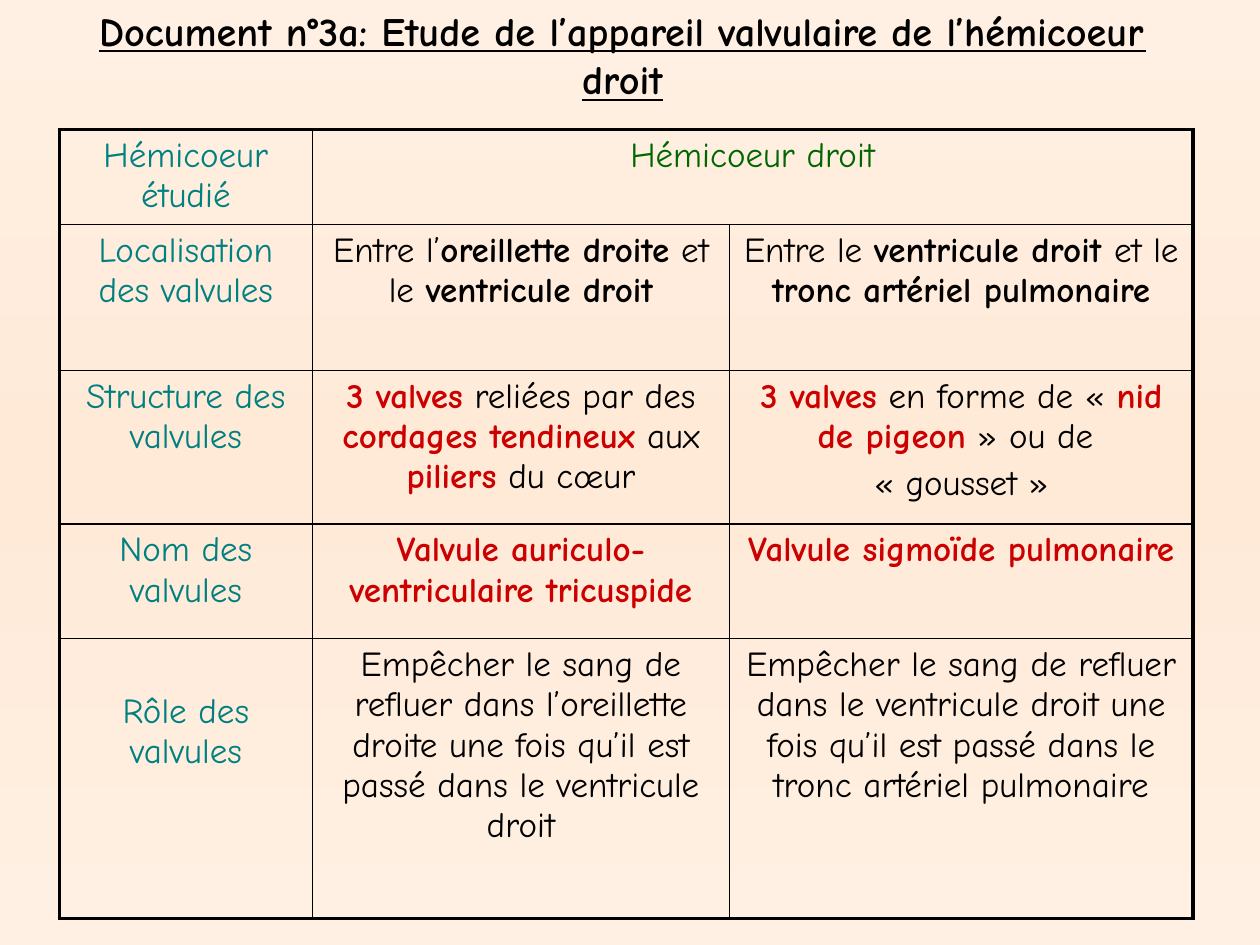
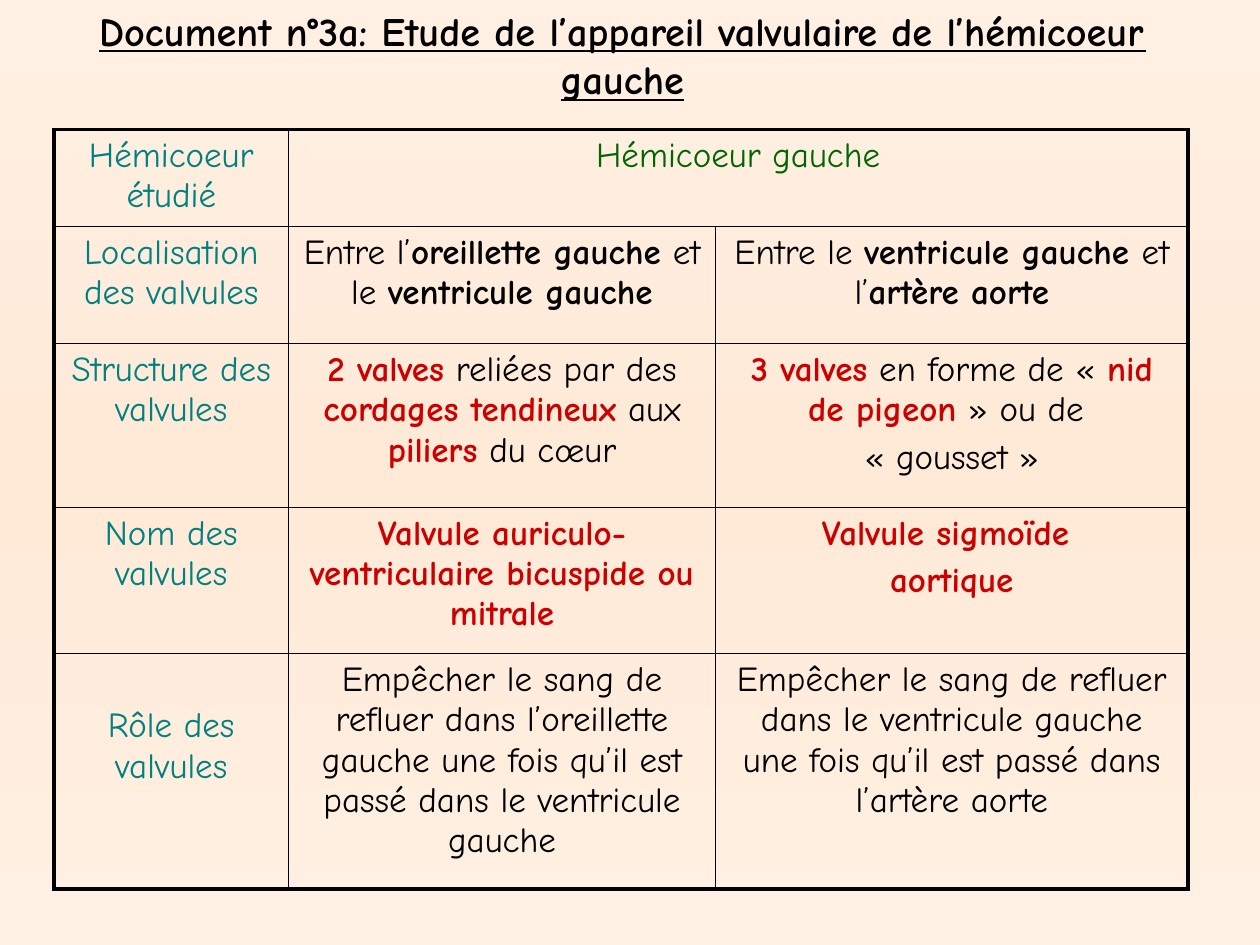
import copy

import pptx
import pptx.dml.color
import pptx.enum.text
import pptx.oxml
import pptx.oxml.ns
import pptx.util
from pptx.util import Inches

FONT = "Comic Neue"
BLACK, TEAL, GREEN, RED = "000000", "008080", "006600", "CC0000"
BACKGROUND = ("FFF0E3", "FFEAD7", "FFF0E3")
THIN, THICK = 1, 2.25
TITLE = "Document n°3a: Etude de l’appareil valvulaire de l’hémicoeur "
LABELS = (
    "Hémicoeur étudié",
    "Localisation des valvules",
    "Structure des valvules",
    "Nom des valvules",
    "Rôle des valvules",
)
NEST_SHAPE = "*3 valves* en forme de « *nid de pigeon* » ou de \n« gousset »"
CORDED_SHAPE = "*{} valves* reliées par des *cordages tendineux* aux *piliers* du cœur"
PREVENT = "Empêcher le sang de refluer dans {} une fois qu’il est passé dans {}"

# Text between asterisks is emphasised.
HEARTS = (
    {
        "side": "droit",
        "left": 0.47,
        "columns": (2.01, 3.31, 3.68),
        "rows": (0.75, 1.16, 1.22, 0.91, 2.22),
        "valves": (
            ("Entre l’*oreillette droite* et le *ventricule droit*",
             "Entre le *ventricule droit *et le* tronc artériel pulmonaire*"),
            (CORDED_SHAPE.format(3), NEST_SHAPE),
            ("*Valvule auriculo-ventriculaire tricuspide*",
             "*Valvule sigmoïde pulmonaire*"),
            (PREVENT.format("l’oreillette droite", "le ventricule droit"),
             PREVENT.format("le ventricule droit", "le tronc artériel pulmonaire")),
        ),
    },
    {
        "side": "gauche",
        "left": 0.43,
        "columns": (1.86, 3.39, 3.75),
        "rows": (0.75, 0.93, 1.3, 1.16, 1.87),
        "valves": (
            ("Entre l’*oreillette gauche* et le *ventricule gauche*",
             "Entre le *ventricule gauche *et l’*artère aorte*"),
            (CORDED_SHAPE.format(2), NEST_SHAPE),
            ("*Valvule auriculo-ventriculaire bicuspide ou mitrale*",
             "*Valvule sigmoïde *\n*aortique*"),
            (PREVENT.format("l’oreillette gauche", "le ventricule gauche"),
             PREVENT.format("le ventricule gauche", "l’artère aorte")),
        ),
    },
)


def rgb(value):
    return pptx.dml.color.RGBColor.from_string(value)


def paint_background(slide):
    fill = slide.background.fill
    fill.gradient()
    fill.gradient_angle = 90
    stop_list = slide._element.find(".//" + pptx.oxml.ns.qn("a:gsLst"))
    stop_list.insert(1, copy.deepcopy(stop_list[0]))
    for index, (stop, color) in enumerate(zip(fill.gradient_stops, BACKGROUND)):
        stop.position = index / 2
        stop.color.rgb = rgb(color)


def write(frame, text, size, color, emphasis=BLACK, underline=False):
    for index, line in enumerate(text.split("\n")):
        para = frame.add_paragraph() if index else frame.paragraphs[0]
        para.alignment = pptx.enum.text.PP_ALIGN.CENTER
        if index:
            para.space_before = pptx.util.Pt(4)
        for position, part in enumerate(line.split("*")):
            if not part:
                continue
            strong = position % 2 == 1
            span = para.add_run()
            span.text = part
            span.font.name = FONT
            span.font.size = pptx.util.Pt(size)
            span.font.bold = strong
            span.font.underline = underline
            span.font.color.rgb = rgb(emphasis if strong else color)


def draw_borders(cell, widths):
    properties = cell._tc.get_or_add_tcPr()
    for side, width in zip("LRTB", widths):
        properties.append(pptx.oxml.parse_xml(
            f'<a:ln{side} {pptx.oxml.ns.nsdecls("a")} w="{int(pptx.util.Pt(width))}">'
            f'<a:solidFill><a:srgbClr val="{BLACK}"/></a:solidFill></a:ln{side}>'))
    cell.fill.background()


def add_title(slide, side):
    box = slide.shapes.add_textbox(Inches(0.39), 0, Inches(9.1), Inches(0.87))
    box.text_frame.word_wrap = True
    write(box.text_frame, f"*{TITLE}{side}*", 23, BLACK, underline=True)


def add_valve_table(slide, heart):
    columns, rows = heart["columns"], heart["rows"]
    table = slide.shapes.add_table(
        len(rows), len(columns), Inches(heart["left"]), Inches(1.03),
        Inches(sum(columns)), Inches(sum(rows))).table
    table.first_row = table.horz_banding = False
    for column, width in zip(table.columns, columns):
        column.width = Inches(width)
    for row, height in zip(table.rows, rows):
        row.height = Inches(height)
    table.cell(0, 1).merge(table.cell(0, 2))

    last_row, last_column = len(rows) - 1, len(columns) - 1
    for r in range(len(rows)):
        for c in range(len(columns)):
            outer = (c == 0, c == last_column or (r == 0 and c == 1), r == 0, r == last_row)
            draw_borders(table.cell(r, c), [THICK if edge else THIN for edge in outer])

    for r, label in enumerate(LABELS):
        write(table.cell(r, 0).text_frame, label, 20, TEAL)
    table.cell(last_row, 0).margin_top = Inches(0.42)
    write(table.cell(0, 1).text_frame, f"Hémicoeur {heart['side']}", 20, GREEN)
    for r, texts in enumerate(heart["valves"], 1):
        for c, text in enumerate(texts, 1):
            write(table.cell(r, c).text_frame, text, 20, BLACK, BLACK if r == 1 else RED)


def main():
    deck = pptx.Presentation()
    deck.slide_width, deck.slide_height = Inches(10), Inches(7.5)
    for heart in HEARTS:
        slide = deck.slides.add_slide(deck.slide_layouts[6])
        paint_background(slide)
        add_valve_table(slide, heart)
        add_title(slide, heart["side"])
    deck.save("out.pptx")


if __name__ == "__main__":
    main()
